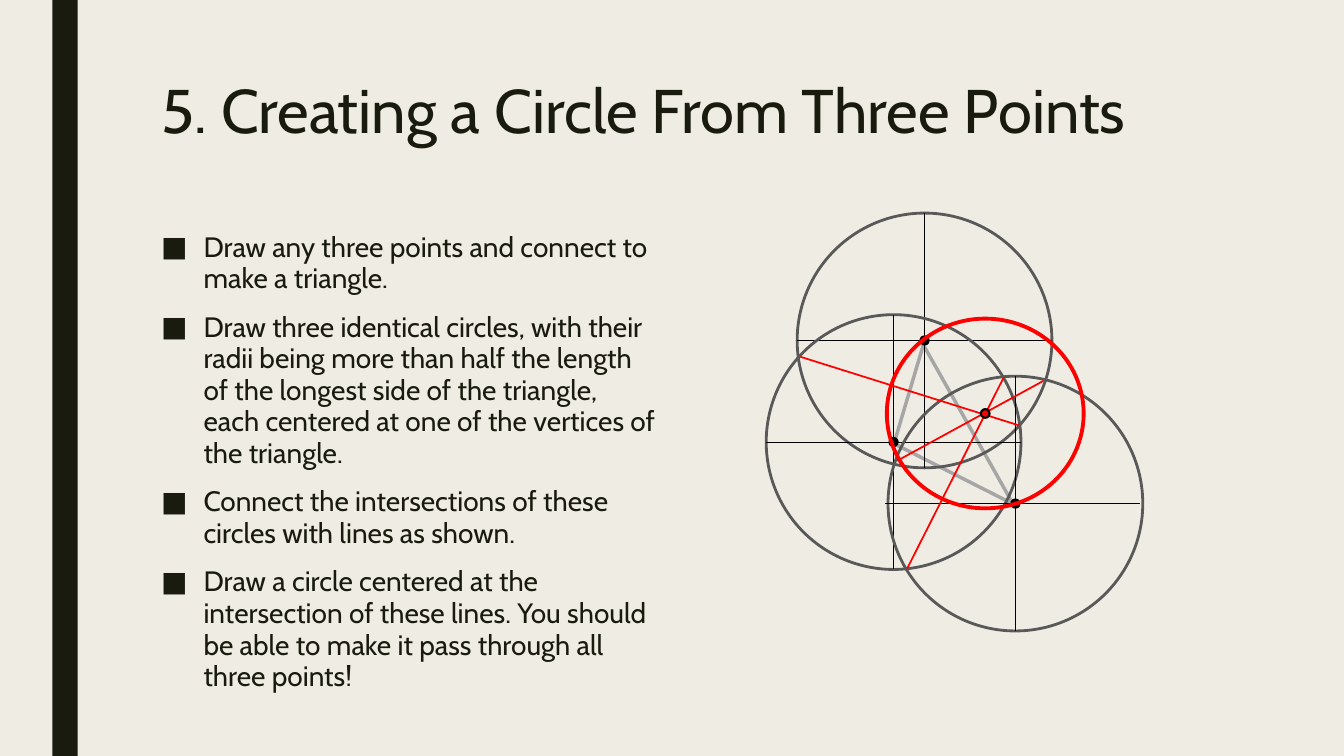
"""Build the slide on drawing a circle through three points."""
from lxml.etree import SubElement
from pptx import Presentation
from pptx.dml.color import RGBColor
from pptx.enum.shapes import MSO_CONNECTOR as Connector, MSO_SHAPE as Shape
from pptx.enum.text import MSO_ANCHOR as Anchor, PP_ALIGN as Align
from pptx.oxml.ns import qn
from pptx.util import Cm, Pt

TITLE = "5. Creating a Circle From Three Points"
STEPS = [
    "Draw any three points and connect to make a triangle.",
    "Draw three identical circles, with their radii being more than half the length "
    "of the longest side of the triangle, each centered at one of the vertices of the triangle.",
    "Connect the intersections of these circles with lines as shown.",
    "Draw a circle centered at the intersection of these lines. "
    "You should be able to make it pass through all three points!",
]
INK, PAPER, BLACK, RED = "191B0E", "EFEDE3", "000000", "FF0000"
GREY, SILVER = "595959", "A6A6A6"
FONT = "Cabin"

VERTICES = [(23.3, 8.58), (22.52, 11.14), (25.59, 12.69)]
TRIANGLE = [(23.27, 8.69), (22.53, 11.18), (25.53, 12.7)]
DIAMETER_SHIFTS = [0, 0, -0.08]
RADIUS, DOT_RADIUS = 3.21, 0.13
BISECTORS = [
    ((22.86, 14.33), (25.3, 9.5)),
    ((25.68, 10.72), (20.17, 8.99)),
    ((26.29, 9.6), (22.61, 11.61)),
]
CENTER, CENTER_RADIUS = (24.83, 10.42), 0.11
RESULT_RADII = (2.48, 2.39)


def color(code):
    return RGBColor.from_string(code)


def assign(target, values):
    for name, value in values.items():
        setattr(target, name, value)


def paint(shape, fill=None, line=None, width=0):
    shape.shadow.inherit = False
    if fill:
        shape.fill.solid()
        shape.fill.fore_color.rgb = color(fill)
    else:
        shape.fill.background()
    if line:
        shape.line.color.rgb = color(line)
        shape.line.width = Pt(width)
    else:
        shape.line.fill.background()


def add_circle(page, center, radii, **style):
    (x, y), (across, down) = center, radii
    circle = page.shapes.add_shape(
        Shape.OVAL, Cm(x - across), Cm(y - down), Cm(2 * across), Cm(2 * down))
    paint(circle, **style)


def add_line(page, start, end, line, width):
    connector = page.shapes.add_connector(
        Connector.STRAIGHT, *[Cm(value) for value in (*start, *end)])
    connector.line.color.rgb = color(line)
    connector.line.width = Pt(width)
    SubElement(connector._element.spPr, qn("a:effectLst"))


def write(para, text, size, spacing):
    para.line_spacing = spacing
    span = para.add_run()
    span.text = text
    assign(span.font, {"name": FONT, "size": Pt(size)})
    span.font.color.rgb = color(INK)


def add_title(page):
    title = page.shapes.title
    assign(title, {"left": Cm(3.81), "top": Cm(1.9), "width": Cm(26.67), "height": Cm(4.11)})
    assign(title.text_frame, {"vertical_anchor": Anchor.TOP, "word_wrap": True})
    para = title.text_frame.paragraphs[0]
    para.alignment = Align.LEFT
    write(para, TITLE, 44, 0.89)


def add_steps(page):
    box = page.shapes.add_textbox(Cm(3.81), Cm(5.72), Cm(13.03), Cm(14.73))
    frame = box.text_frame
    frame.word_wrap = True
    for index, step in enumerate(STEPS):
        para = frame.add_paragraph() if index else frame.paragraphs[0]
        write(para, step, 20, 0.94)
        assign(para, {"space_before": Pt(10), "space_after": Pt(2)})
        props = para._p.get_or_add_pPr()
        props.set("marL", str(Cm(1.07)))
        props.set("indent", str(-Cm(1.07)))
        SubElement(props, qn("a:buFont")).set("typeface", FONT)
        SubElement(props, qn("a:buChar")).set("char", "■")


def add_construction(page):
    corners = [(Cm(x), Cm(y)) for x, y in TRIANGLE]
    builder = page.shapes.build_freeform(*corners[0])
    builder.add_line_segments(corners[1:], close=True)
    paint(builder.convert_to_shape(), line=SILVER, width=2.5)

    for vertex in VERTICES:
        add_circle(page, vertex, (DOT_RADIUS, DOT_RADIUS), fill=BLACK)
    for (x, y), shift in zip(VERTICES, DIAMETER_SHIFTS):
        add_circle(page, (x, y), (RADIUS, RADIUS), line=GREY, width=2)
        add_line(page, (x, y - RADIUS), (x, y + RADIUS), BLACK, 0.5)
        add_line(page, (x + shift + RADIUS, y), (x + shift - RADIUS, y), BLACK, 0.5)
    for start, end in BISECTORS:
        add_line(page, start, end, RED, 1.25)
    add_circle(page, CENTER, (CENTER_RADIUS, CENTER_RADIUS), fill=RED, line=BLACK, width=1.5)
    add_circle(page, CENTER, RESULT_RADII, line=RED, width=2.75)


def main():
    deck = Presentation()
    assign(deck, {"slide_width": Cm(33.87), "slide_height": Cm(19.05)})
    page = deck.slides.add_slide(deck.slide_layouts[5])
    page.background.fill.solid()
    page.background.fill.fore_color.rgb = color(PAPER)
    bar = page.shapes.add_shape(Shape.RECTANGLE, Cm(1.32), 0, Cm(0.64), deck.slide_height)
    paint(bar, fill=INK)
    add_title(page)
    add_steps(page)
    add_construction(page)
    deck.save("out.pptx")


if __name__ == "__main__":
    main()
